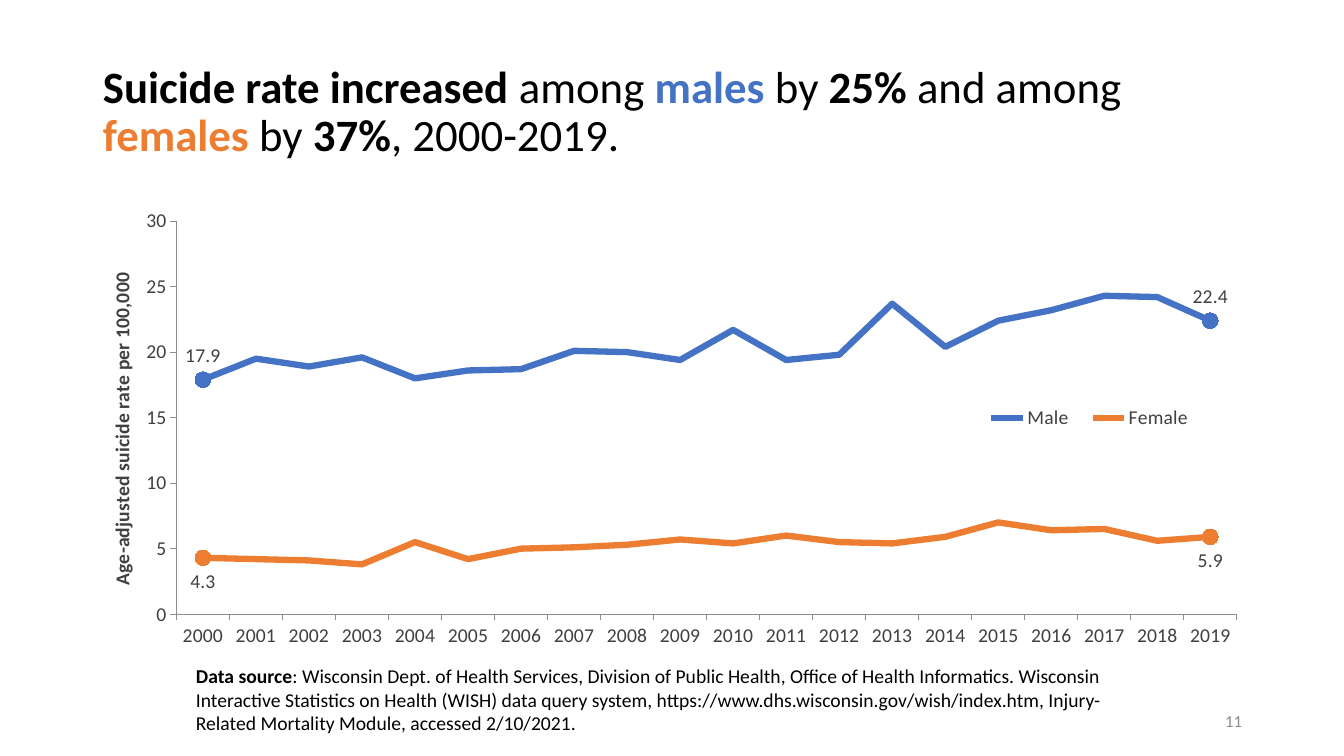
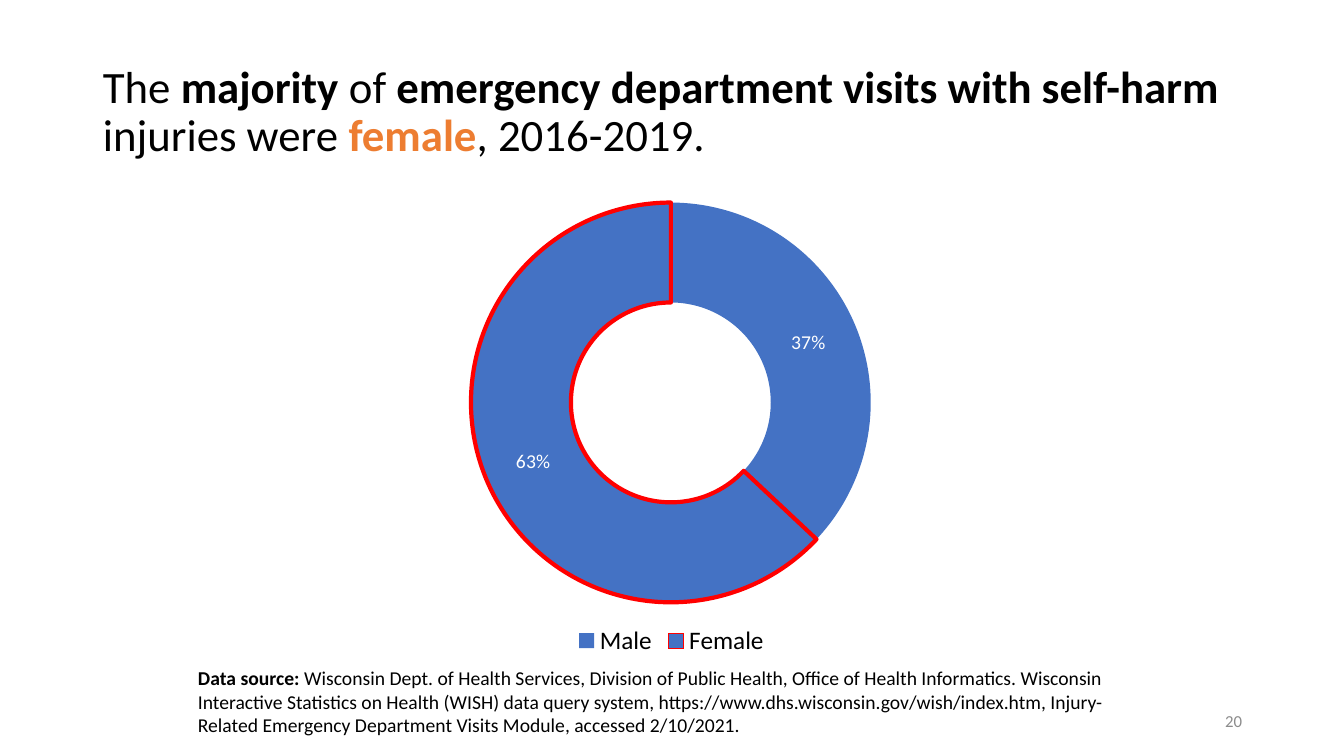
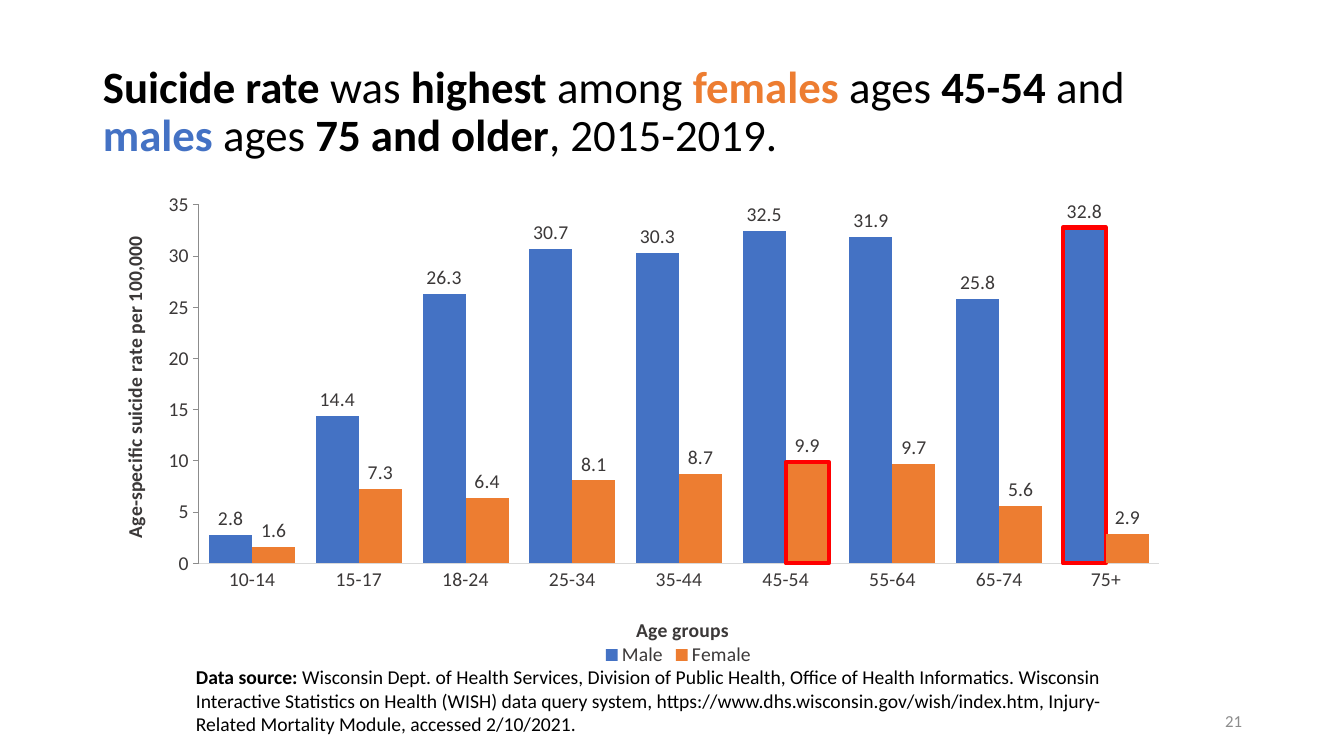
from lxml.etree import SubElement
from pptx import Presentation
from pptx.chart.data import CategoryChartData
from pptx.dml.color import RGBColor
from pptx.enum.chart import (XL_CHART_TYPE, XL_LABEL_POSITION, XL_LEGEND_POSITION,
                             XL_MARKER_STYLE, XL_TICK_MARK)
from pptx.enum.text import MSO_ANCHOR, PP_ALIGN
from pptx.oxml import parse_xml
from pptx.oxml.ns import nsdecls, qn
from pptx.util import Emu, Pt

COLORS = {
    "text": "000000",
    "male": "4472C4",
    "female": "ED7D31",
    "highlight": "FF0000",
    "number": "8C8C8C",
    "axis": "8C8C8C",
    "baseline": "D9D9D9",
    "line_chart": "404040",
    "column_chart": "3B3838",
    "white": "FFFFFF",
}
FONT = "Calibri"
EMU_PER_PX = 12192000 / 1344
SEXES = ("male", "female")
CITATION = (
    "Data source: Wisconsin Dept. of Health Services, Division of Public Health, "
    "Office of Health Informatics. Wisconsin Interactive Statistics on Health (WISH) "
    "data query system, https://www.dhs.wisconsin.gov/wish/index.htm, "
    "Injury-Related {module} Module, accessed 2/10/2021."
)


def px(length):
    return Emu(round(length * EMU_PER_PX))


def color(key):
    return RGBColor.from_string(COLORS[key])


def apply(target, **values):
    for name, value in values.items():
        setattr(target, name, value)


def style_font(font, size, key="text", bold=False):
    apply(font, name=FONT, size=Pt(size), bold=bold)
    font.color.rgb = color(key)


def style_fill(fill, key):
    fill.solid()
    fill.fore_color.rgb = color(key)


def style_line(line, key, width):
    line.color.rgb = color(key)
    line.width = Pt(width)


def place(element, index, **fractions):
    """Give a chart part a manual layout, as fractions of the chart."""
    for old in element.findall(qn("c:layout")):
        element.remove(old)
    layout = parse_xml(f"<c:layout {nsdecls('c')}><c:manualLayout/></c:layout>")
    manual = layout[0]
    if element.tag == qn("c:plotArea"):
        SubElement(manual, qn("c:layoutTarget")).set("val", "inner")
    for axis in "xy":
        SubElement(manual, qn(f"c:{axis}Mode")).set("val", "edge")
    for name, value in fractions.items():
        SubElement(manual, qn(f"c:{name}")).set("val", str(value))
    element.insert(index, layout)


class Deck:
    def __init__(self):
        self.presentation = Presentation()
        apply(self.presentation, slide_width=px(1344), slide_height=px(756))
        self.slide = None

    def new_slide(self, number, title):
        layout = self.presentation.slide_layouts[6]
        self.slide = self.presentation.slides.add_slide(layout)
        heading = self.text((93, 40, 1159, 146), title, 32, MSO_ANCHOR.MIDDLE)
        heading.line_spacing = 0.9
        page = self.text((950, 701, 302, 40), [(str(number), "number")], 12,
                         MSO_ANCHOR.MIDDLE)
        page.alignment = PP_ALIGN.RIGHT

    def text(self, box, runs, size, anchor=MSO_ANCHOR.TOP):
        """Add one paragraph; each run is (text, style), where style is
        "plain", "bold" or the key of a colour."""
        frame = self.slide.shapes.add_textbox(*map(px, box)).text_frame
        apply(frame, word_wrap=True, vertical_anchor=anchor)
        paragraph = frame.paragraphs[0]
        for content, style in runs:
            run = paragraph.add_run()
            run.text = content
            key = style if style in COLORS else "text"
            style_font(run.font, size, key, style in ("bold", *SEXES))
        return paragraph

    def source(self, box, module, lead="Data source: "):
        citation = CITATION.format(module=module)
        self.text(box, [(lead, "bold"), (citation.removeprefix(lead), "plain")], 14)

    def chart(self, kind, box, categories, series, plot_box, size, key):
        data = CategoryChartData()
        data.categories = categories
        for name, values in series.items():
            data.add_series(name, values)
        chart = self.slide.shapes.add_chart(kind, *map(px, box), data).chart
        apply(chart, has_title=False, has_legend=True)
        apply(chart.legend, position=XL_LEGEND_POSITION.BOTTOM, include_in_layout=False)
        style_font(chart.font, size, key)
        place(chart._chartSpace.chart.plotArea, 0, **dict(zip("xywh", plot_box)))
        return chart

    def value_axis(self, chart, maximum, title, spot, key):
        axis = chart.value_axis
        apply(axis, minimum_scale=0, maximum_scale=maximum, major_unit=5,
              has_major_gridlines=False, major_tick_mark=XL_TICK_MARK.OUTSIDE)
        style_line(axis.format.line, "axis", 0.75)
        self.axis_title(axis, title, spot, key, "-5400000")

    def category_axis(self, chart, tick, key):
        axis = chart.category_axis
        apply(axis, major_tick_mark=tick, has_major_gridlines=False)
        style_line(axis.format.line, key, 0.75)

    def axis_title(self, axis, title, spot, key, rotation="0"):
        frame = axis.axis_title.text_frame
        run = frame.paragraphs[0].add_run()
        run.text = title
        style_font(run.font, 14, key, True)
        frame._txBody.bodyPr.set("rot", rotation)
        place(axis.axis_title._element, 1, **dict(zip("xy", spot)))

    def save(self):
        self.presentation.save("out.pptx")


def trend_slide(deck):
    deck.new_slide(11, [
        ("Suicide rate increased ", "bold"), ("among ", "plain"), ("males ", "male"),
        ("by ", "plain"), ("25% ", "bold"), ("and among ", "plain"),
        ("females", "female"), (" by ", "plain"), ("37%", "bold"),
        (", 2000-2019.", "plain"),
    ])
    deck.source((186, 659, 970, 82), "Mortality", lead="Data source")
    rates = {
        "Male": (17.9, 19.5, 18.9, 19.6, 18, 18.6, 18.7, 20.1, 20, 19.4,
                 21.7, 19.4, 19.8, 23.7, 20.4, 22.4, 23.2, 24.3, 24.2, 22.4),
        "Female": (4.3, 4.2, 4.1, 3.8, 5.5, 4.2, 5, 5.1, 5.3, 5.7,
                   5.4, 6, 5.5, 5.4, 5.9, 7, 6.4, 6.5, 5.6, 5.9),
    }
    years = [str(year) for year in range(2000, 2020)]
    chart = deck.chart(XL_CHART_TYPE.LINE, (93, 202, 1159, 480), years, rates,
                       (0.072, 0.04, 0.915, 0.819), 14, "line_chart")
    deck.value_axis(chart, 30, "Age-adjusted suicide rate per 100,000",
                    (0.01, 0.14), "line_chart")
    deck.category_axis(chart, XL_TICK_MARK.OUTSIDE, "axis")
    apply(chart.legend, position=XL_LEGEND_POSITION.RIGHT, include_in_layout=True)
    place(chart.legend._element, 1, x=0.76, y=0.42, w=0.2, h=0.06)

    label_sides = (XL_LABEL_POSITION.ABOVE, XL_LABEL_POSITION.BELOW)
    for series, sex, side in zip(chart.plots[0].series, SEXES, label_sides):
        series.smooth = False
        style_line(series.format.line, sex, 4.5)
        series.marker.style = XL_MARKER_STYLE.NONE
        series.data_labels.show_value = False
        for end in (0, len(years) - 1):
            point = series.points[end]
            style_line(point.format.line, sex, 4.5)
            apply(point.marker, style=XL_MARKER_STYLE.CIRCLE, size=11)
            style_fill(point.marker.format.fill, sex)
            style_line(point.marker.format.line, sex, 0.75)
            point.data_label.position = side


def visits_slide(deck):
    deck.new_slide(20, [
        ("The ", "plain"), ("majority ", "bold"), ("of ", "plain"),
        ("emergency department visits with self-harm ", "bold"),
        ("injuries were ", "plain"), ("female", "female"), (", 2016-2019.", "plain"),
    ])
    chart = deck.chart(XL_CHART_TYPE.DOUGHNUT, (92, 181, 1159, 480),
                       ("Male", "Female"), {"Series 1": (37, 63)},
                       (0.327, 0.045, 0.345, 0.833), 18, "text")
    plot = chart.plots[0]
    plot._element.find(qn("c:holeSize")).set("val", "60")
    shares = plot.series[0]
    style_fill(shares.format.fill, "male")
    male, female = shares.points[0], shares.points[1]
    for point in (male, female):
        style_fill(point.format.fill, "male")
    male.format.line.fill.background()
    style_line(female.format.line, "highlight", 3)
    labels = shares.data_labels
    apply(labels, show_value=True, show_percentage=False,
          number_format='0"%"', number_format_is_linked=False)
    style_font(labels.font, 14, "white")
    deck.source((188, 661, 935, 82), "Emergency Department Visits")


def age_slide(deck):
    deck.new_slide(21, [
        ("Suicide rate", "bold"), (" was ", "plain"), ("highest", "bold"),
        (" among ", "plain"), ("females", "female"), (" ages ", "plain"),
        ("45-54 ", "bold"), ("and ", "plain"), ("males", "male"), (" ages ", "plain"),
        ("75 and older", "bold"), (", 2015-2019.", "plain"),
    ])
    ages = ("10-14", "15-17", "18-24", "25-34", "35-44", "45-54", "55-64", "65-74", "75+")
    rates = {
        "Male": (2.8, 14.4, 26.3, 30.7, 30.3, 32.5, 31.9, 25.8, 32.8),
        "Female": (1.6, 7.3, 6.4, 8.1, 8.7, 9.9, 9.7, 5.6, 2.9),
    }
    chart = deck.chart(XL_CHART_TYPE.COLUMN_CLUSTERED, (106, 184, 1145, 487), ages, rates,
                       (0.081, 0.043, 0.839, 0.736), 14, "column_chart")
    deck.value_axis(chart, 35, "Age-specific suicide rate per 100,000",
                    (0.01, 0.1), "column_chart")
    deck.category_axis(chart, XL_TICK_MARK.NONE, "baseline")
    deck.axis_title(chart.category_axis, "Age groups", (0.46, 0.88), "column_chart")

    plot = chart.plots[0]
    apply(plot, gap_width=48, overlap=0, vary_by_categories=False)
    for series, sex, values in zip(plot.series, SEXES, rates.values()):
        style_fill(series.format.fill, sex)
        apply(series.data_labels, show_value=True,
              position=XL_LABEL_POSITION.OUTSIDE_END)
        peak = series.points[values.index(max(values))]
        style_fill(peak.format.fill, sex)
        style_line(peak.format.line, "highlight", 3)
    deck.source((186, 660, 970, 82), "Mortality")


def main():
    deck = Deck()
    for build in (trend_slide, visits_slide, age_slide):
        build(deck)
    deck.save()


if __name__ == "__main__":
    main()
